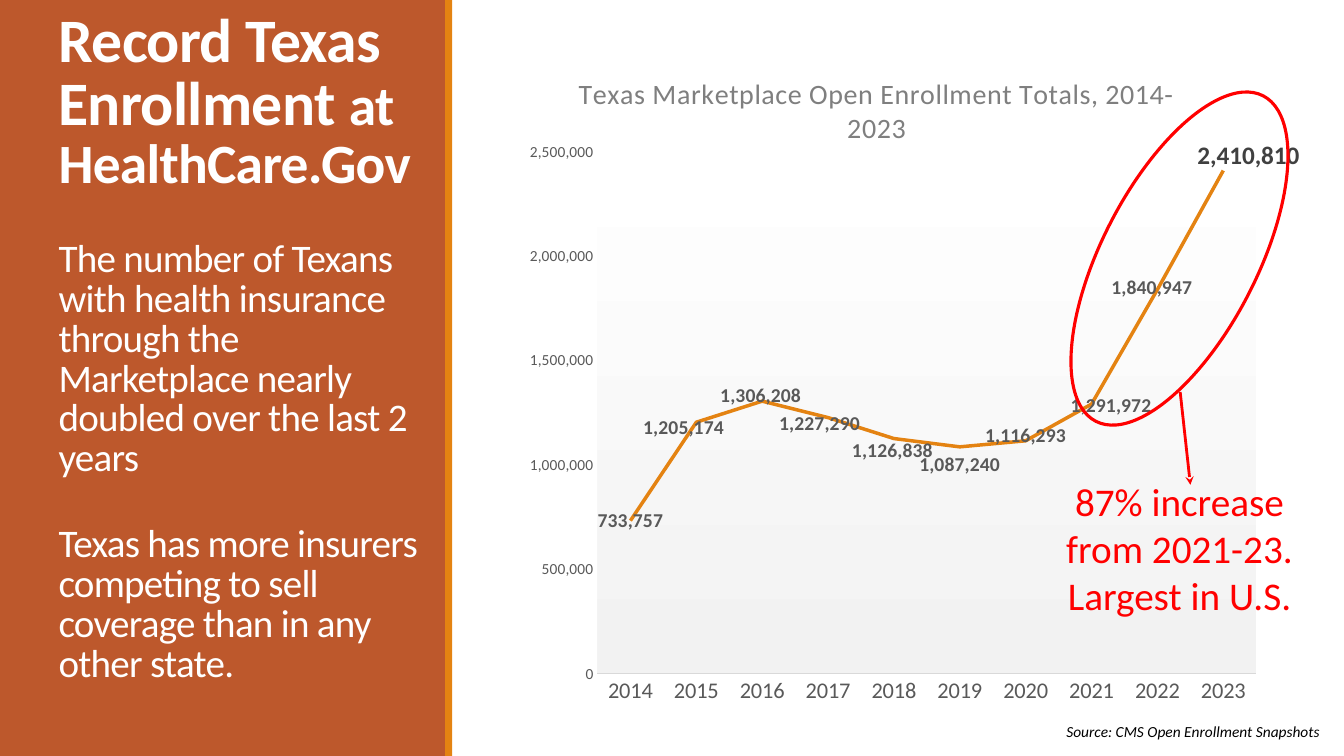
from lxml.etree import SubElement
from pptx import Presentation
from pptx.chart.data import CategoryChartData
from pptx.dml.color import RGBColor
from pptx.enum.chart import XL_CHART_TYPE, XL_LABEL_POSITION, XL_TICK_MARK
from pptx.enum.shapes import MSO_CONNECTOR, MSO_SHAPE
from pptx.enum.text import MSO_ANCHOR, MSO_AUTO_SIZE, PP_ALIGN
from pptx.oxml import parse_xml
from pptx.oxml.ns import nsdecls, qn
from pptx.util import Pt

RUST, ORANGE, RED, WHITE, GREY = "BD582C", "E48312", "FF0000", "FFFFFF", "595959"
ENROLLMENT = {
    "2014": 733757, "2015": 1205174, "2016": 1306208, "2017": 1227290,
    "2018": 1126838, "2019": 1087240, "2020": 1116293, "2021": 1291972,
    "2022": 1840947, "2023": 2410810,
}
LABEL_SHIFTS = [(0, 0), (-9, 4), (-1, -4), (-6, 4), (-1, 9),
                (0, 13), (0, -4), (14, 1), (-4, -1), (18, -11)]
CHART_BOX = (346.3, 28.8, 587.5, 501.8)


def rgb(value):
    """Turn a hex string into a colour."""
    return RGBColor.from_string(value)


def set_font(font, color, **values):
    """Apply the slide typeface, a colour and further font values."""
    font.color.rgb = rgb(color)
    for name, value in {"name": "Calibri", **values}.items():
        setattr(font, name, value)


def add_shape(s, kind, box, fill=None, line=None, weight=0):
    """Add a flat preset shape."""
    sp = s.shapes.add_shape(kind, *map(Pt, box))
    sp.shadow.inherit = False
    if fill:
        sp.fill.solid()
        sp.fill.fore_color.rgb = rgb(fill)
    else:
        sp.fill.background()
    if line:
        sp.line.color.rgb = rgb(line)
        sp.line.width = Pt(weight)
    else:
        sp.line.fill.background()
    return sp


def add_band(s, box, fill, depth):
    """Add a full-height band behind the title."""
    sp = add_shape(s, MSO_SHAPE.RECTANGLE, box, fill)
    s.shapes._spTree.insert(depth, sp._element)


def add_text(s, box, lines, color, align, anchor=MSO_ANCHOR.TOP, **values):
    """Add a wrapped text box with one paragraph per line."""
    tf = s.shapes.add_textbox(*map(Pt, box)).text_frame
    tf.word_wrap = True
    tf.vertical_anchor = anchor
    for i, line in enumerate(lines):
        p = tf.add_paragraph() if i else tf.paragraphs[0]
        p.alignment = align
        r = p.add_run()
        r.text = line
        set_font(r.font, color, **values)


def add_arrow(s, start, end):
    """Add a red line with a stealth arrowhead at its end."""
    line = s.shapes.add_connector(MSO_CONNECTOR.STRAIGHT, *map(Pt, start + end))
    line.line.color.rgb = rgb(RED)
    line.line.width = Pt(2)
    SubElement(line.line._get_or_add_ln(), qn("a:tailEnd"), type="stealth")
    SubElement(line._element.spPr, qn("a:effectLst"))


def fill_title(s):
    """Place the heading and its two statements in the title placeholder."""
    sp = s.shapes.title
    sp.left, sp.top, sp.width, sp.height = map(Pt, (34.6, 5, 280, 490))
    tf = sp.text_frame
    tf.word_wrap = True
    tf.auto_size = MSO_AUTO_SIZE.NONE
    tf.vertical_anchor = MSO_ANCHOR.TOP
    paragraphs = [
        [("Record Texas Enrollment ", 44.1, True), ("at HealthCare.Gov", 39.6, True)],
        [("The number of Texans with health insurance through the Marketplace "
          "nearly doubled over the last 2 years", 27.9, False)],
        [("Texas has more insurers competing to sell coverage than in any "
          "other state.", 27.9, False)],
    ]
    for i, runs in enumerate(paragraphs):
        p = tf.add_paragraph() if i else tf.paragraphs[0]
        p.alignment = PP_ALIGN.LEFT
        p.line_spacing = 0.85
        p.space_before = Pt(33 if i else 0)
        for text, size, bold in runs:
            r = p.add_run()
            r.text = text
            set_font(r.font, WHITE, size=Pt(size), bold=bold)
            r._r.get_or_add_rPr().set("spc", "-50")


def layout_xml(x, y, w=None, h=None):
    """Build a manual chart layout from fractions of the chart."""
    inner, modes, size = "", "", ""
    if w:
        inner = '<c:layoutTarget val="inner"/>'
        size = f'<c:w val="{w}"/><c:h val="{h}"/>'
    if w or (x > 0.1 and y > 0):
        modes = '<c:xMode val="edge"/><c:yMode val="edge"/>'
    return parse_xml(
        f'<c:layout {nsdecls("c")}><c:manualLayout>{inner}{modes}'
        f'<c:x val="{x:.4f}"/><c:y val="{y:.4f}"/>{size}</c:manualLayout></c:layout>')


def format_title(chart):
    """Write the chart title near the top."""
    tf = chart.chart_title.text_frame
    r = tf.paragraphs[0].add_run()
    r.text = "Texas Marketplace Open Enrollment Totals, 2014-2023"
    set_font(r.font, "7F7F7F", size=Pt(20), bold=False)
    r._r.get_or_add_rPr().set("spc", "30")
    chart.chart_title.include_in_layout = False
    title = chart.chart_title._element
    for old in title.findall(qn("c:layout")):
        title.remove(old)
    title.find(qn("c:tx")).addnext(layout_xml(0.108, 0.04))


def format_axes(chart):
    """Style both axes."""
    for axis, size in ((chart.category_axis, 16), (chart.value_axis, 11)):
        axis.has_major_gridlines = False
        axis.major_tick_mark = axis.minor_tick_mark = XL_TICK_MARK.NONE
        set_font(axis.tick_labels.font, GREY, size=Pt(size))
    chart.category_axis.format.line.color.rgb = rgb("D9D9D9")
    chart.category_axis.format.line.width = Pt(0.75)
    axis = chart.value_axis
    axis.format.line.fill.background()
    scale = {"minimum_scale": 0, "maximum_scale": 2500000, "major_unit": 500000}
    for name, value in scale.items():
        setattr(axis, name, value)
    axis.tick_labels.number_format = "#,##0"
    axis.tick_labels.number_format_is_linked = False


def format_labels(series):
    """Show a shifted value label at each point, the last one larger."""
    for i, shift in enumerate(LABEL_SHIFTS):
        last = i == len(LABEL_SHIFTS) - 1
        label = series.points[i].data_label
        label.position = XL_LABEL_POSITION.CENTER
        set_font(label.font, "404040" if last else GREY,
                 size=Pt(18 if last else 14), bold=True)
        if any(shift):
            x, y = shift[0] / CHART_BOX[2], shift[1] / CHART_BOX[3]
            dLbl = series._element.xpath(f"c:dLbls/c:dLbl[c:idx/@val='{i}']")[0]
            dLbl.find(qn("c:idx")).addnext(layout_xml(x, y))


def add_enrollment_chart(s):
    """Add the line chart of yearly enrollment."""
    data = CategoryChartData(number_format="#,##0")
    data.categories = list(ENROLLMENT)
    data.add_series("Series 1", list(ENROLLMENT.values()))
    chart = s.shapes.add_chart(XL_CHART_TYPE.LINE, *map(Pt, CHART_BOX), data).chart
    chart.has_legend = False
    set_font(chart.font, "000000", size=Pt(10))
    format_title(chart)
    format_axes(chart)
    plot = chart.plots[0]
    plot.vary_by_categories = False
    series = plot.series[0]
    series.smooth = False
    series.format.line.color.rgb = rgb(ORANGE)
    series.format.line.width = Pt(2.5)
    format_labels(series)
    area = chart._chartSpace.chart.plotArea
    for old in area.findall(qn("c:layout")):
        area.remove(old)
    area.insert(0, layout_xml(0.137, 0.159, 0.801, 0.743))
    area.append(parse_xml(
        f'<c:spPr {nsdecls("c", "a")}><a:gradFill><a:gsLst>'
        '<a:gs pos="0"><a:srgbClr val="FFFFFF"/></a:gs>'
        '<a:gs pos="100000"><a:srgbClr val="F2F2F2"/></a:gs></a:gsLst>'
        '<a:lin ang="5400000" scaled="0"/></a:gradFill></c:spPr>'))


def main():
    """Build and save the slide."""
    prs = Presentation()
    prs.slide_width, prs.slide_height = Pt(960), Pt(540)
    s = prs.slides.add_slide(prs.slide_layouts[5])
    add_band(s, (0, 0, 319, 540), RUST, 2)
    add_band(s, (318, 0, 5, 540), ORANGE, 3)
    fill_title(s)
    add_text(s, (754.6, 512, 205, 21), ["Source: CMS Open Enrollment Snapshots"],
             "000000", PP_ALIGN.LEFT, size=Pt(11), italic=True)
    add_enrollment_chart(s)
    ring = add_shape(s, MSO_SHAPE.OVAL, (787, 54, 111, 261.4), line=RED, weight=2.25)
    ring.rotation = 27.2
    add_arrow(s, (843, 280), (850.3, 346.3))
    add_text(s, (751, 332, 183, 118), ["87% increase from 2021-23.", "Largest in U.S."],
             RED, PP_ALIGN.CENTER, MSO_ANCHOR.MIDDLE, size=Pt(28))
    prs.save("out.pptx")


if __name__ == "__main__":
    main()
